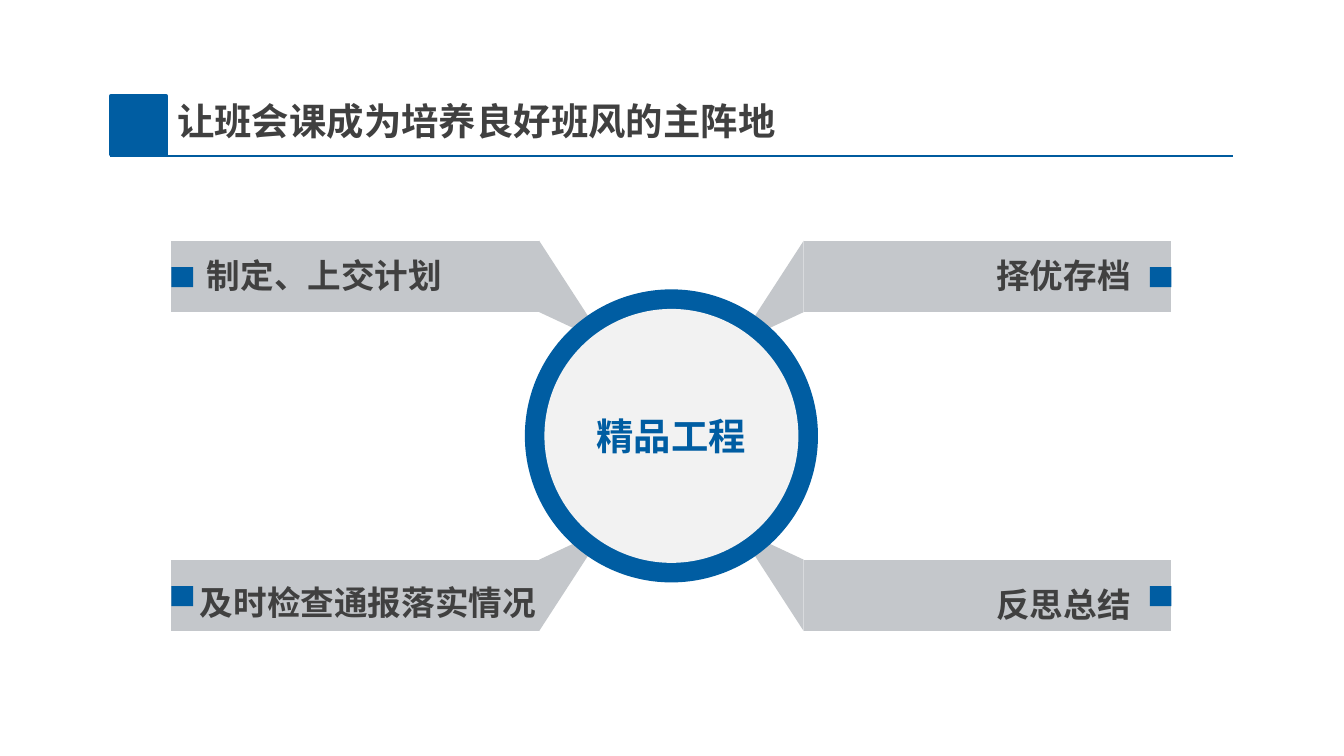
from lxml import etree
from pptx import Presentation
from pptx.dml.color import RGBColor
from pptx.enum.shapes import MSO_CONNECTOR, MSO_SHAPE
from pptx.enum.text import MSO_ANCHOR, PP_ALIGN
from pptx.oxml.ns import qn
from pptx.util import Cm, Pt

RECTANGLE, OVAL = MSO_SHAPE.RECTANGLE, MSO_SHAPE.OVAL
LEFT, CENTER, RIGHT = PP_ALIGN.LEFT, PP_ALIGN.CENTER, PP_ALIGN.RIGHT
FONT = "Noto Sans CJK SC"
BLUE, RULE_BLUE, GREY, PALE, DARK = "005DA2", "005B9E", "C4C7CB", "F2F2F2", "404040"

TITLE = "让班会课成为培养良好班风的主阵地"
HUB = "精品工程"
# Text, horizontal side, vertical side, label box (left, top, width), alignment
BRANCHES = [
    ("择优存档", 1, -1, (15.93, 4.7, 5.44), RIGHT),
    ("制定、上交计划", -1, -1, (3.91, 4.7, 5.44), LEFT),
    ("反思总结", 1, 1, (15.93, 10.92, 5.44), RIGHT),
    ("及时检查通报落实情况", -1, 1, (3.78, 10.87, 6.45), LEFT),
]

# Distances in cm from the hub centre, mirrored into each corner
CENTER_X, CENTER_Y = 12.69, 8.24
BAR = [(9.45, 3.69), (9.45, 2.34), (2.5, 2.34), (2.5, 3.69)]
WEDGE = [(2.5, 3.69), (1.43, 2.04), (1.58, 1.91), (2.5, 2.34)]
BAR_END, BAR_OUTER, BAR_INNER = 9.45, 3.69, 2.34
MARKER_WIDTH, MARKER_HEIGHT, MARKER_DROP = 0.41, 0.38, 0.5
RING_DIAMETER, DISC_DIAMETER = 5.54, 4.8


def color(hex_value):
    return RGBColor.from_string(hex_value)


def paint(shape, fill):
    shape.shadow.inherit = False
    shape.fill.solid()
    shape.fill.fore_color.rgb = color(fill)
    shape.line.fill.background()


def add_block(kind, left, top, width, height, fill):
    shape = slide.shapes.add_shape(kind, Cm(left), Cm(top), Cm(width), Cm(height))
    paint(shape, fill)
    return shape


def add_circle(diameter, fill):
    radius = diameter / 2
    return add_block(OVAL, CENTER_X - radius, CENTER_Y - radius, diameter, diameter, fill)


def add_mirrored(offsets, side_x, side_y):
    """Draw a grey polygon reflected about the hub centre."""
    points = [(Cm(CENTER_X + side_x * x), Cm(CENTER_Y + side_y * y)) for x, y in offsets]
    builder = slide.shapes.build_freeform(*points[0])
    builder.add_line_segments(points[1:], close=True)
    paint(builder.convert_to_shape(), GREY)


def write(shape, text, size, text_color, alignment):
    frame = shape.text_frame
    frame.word_wrap = True
    frame.text = text
    paragraph = frame.paragraphs[0]
    paragraph.alignment = alignment
    font = paragraph.runs[0].font
    font.size, font.bold, font.name = Pt(size), True, FONT
    font.color.rgb = color(text_color)
    east_asian = etree.Element(qn("a:ea"), typeface=FONT)
    paragraph.runs[0].font._element.find(qn("a:latin")).addnext(east_asian)


presentation = Presentation()
presentation.slide_width, presentation.slide_height = Cm(25.4), Cm(14.29)
slide = presentation.slides.add_slide(presentation.slide_layouts[6])

# Title band
rule = slide.shapes.add_connector(MSO_CONNECTOR.STRAIGHT, Cm(2.07), Cm(2.95), Cm(23.3), Cm(2.95))
rule.line.color.rgb = color(RULE_BLUE)
rule.line.width = Pt(0.75)
etree.SubElement(rule._element.spPr, qn("a:effectLst"))
title = slide.shapes.add_textbox(Cm(3.1), Cm(1.73), Cm(14.6), Cm(1.11))
write(title, TITLE, 20, DARK, LEFT)
title_block = add_block(RECTANGLE, 2.1, 1.81, 1.04, 1.12, BLUE)
title_block.line.color.rgb = color(BLUE)
title_block.line.width = Pt(2)

# Branches
for text, side_x, side_y, (left, top, width), alignment in BRANCHES:
    add_mirrored(BAR, side_x, side_y)
    add_mirrored(WEDGE, side_x, side_y)
    marker_left = CENTER_X + side_x * BAR_END - (MARKER_WIDTH if side_x > 0 else 0)
    bar_top = CENTER_Y + (BAR_INNER if side_y > 0 else -BAR_OUTER)
    add_block(RECTANGLE, marker_left, bar_top + MARKER_DROP, MARKER_WIDTH, MARKER_HEIGHT, BLUE)
    label = slide.shapes.add_textbox(Cm(left), Cm(top), Cm(width), Cm(0.79))
    label.text_frame.margin_left = label.text_frame.margin_right = 0
    write(label, text, 18, DARK, alignment)

# Hub
add_circle(RING_DIAMETER, BLUE)
disc = add_circle(DISC_DIAMETER, PALE)
disc.text_frame.vertical_anchor = MSO_ANCHOR.MIDDLE
write(disc, HUB, 20, BLUE, CENTER)

presentation.save("out.pptx")
